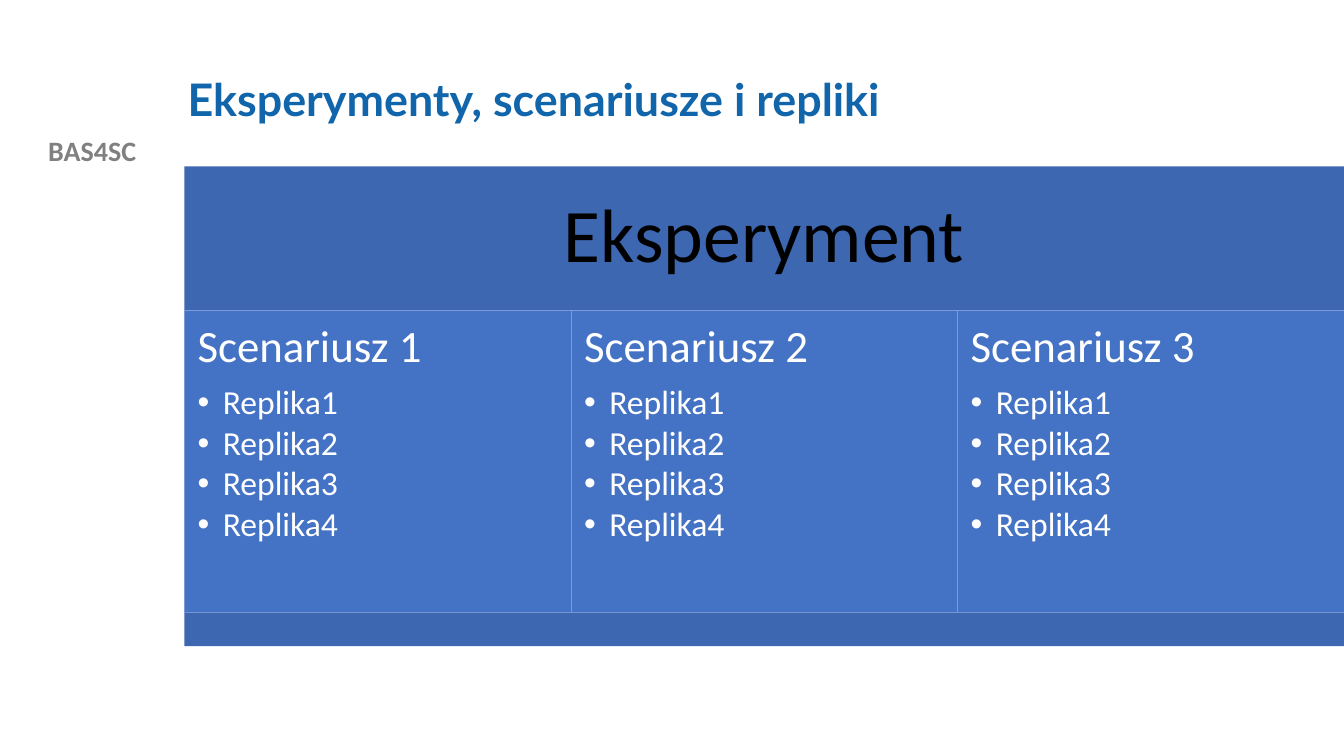
from lxml.etree import SubElement
from pptx import Presentation
from pptx.dml.color import RGBColor
from pptx.enum.shapes import MSO_SHAPE as Shape
from pptx.enum.text import MSO_ANCHOR as Anchor, PP_ALIGN as Align
from pptx.oxml.ns import qn
from pptx.util import Inches, Pt

# Content
TITLE = "Eksperymenty, scenariusze i repliki"
PROJECT = "BAS4SC"
EXPERIMENT = "Eksperyment"
SCENARIOS = ["Scenariusz 1", "Scenariusz 2", "Scenariusz 3"]
REPLICAS = ["Replika1", "Replika2", "Replika3", "Replika4"]

# Grid, in inches
SLIDE_W, SLIDE_H = 13.33, 7.5
LEFT, TOP = 1.83, 1.65
HEADER_H, SCENARIO_H, FOOTER_H = 1.43, 3, 0.33
GRID_W = SLIDE_W - LEFT
COLUMN_W = GRID_W / len(SCENARIOS)

BAR, CELL, CELL_EDGE = "3E67B2", "4472C4", "7A9BD8"
BLACK, WHITE, GREY, TITLE_BLUE = "000000", "FFFFFF", "808080", "1065AB"


def color(hex_code):
    return RGBColor.from_string(hex_code)


def write(paragraph, text, size, hex_code, font="Calibri", bold=False,
          align=Align.LEFT, spacing=0.9, after=0, bullet=False):
    paragraph.alignment = align
    paragraph.line_spacing = spacing
    paragraph.space_after = Pt(after)
    if bullet:
        props = paragraph._p.get_or_add_pPr()
        props.set("marL", str(Inches(0.25)))
        props.set("indent", str(Inches(-0.25)))
        SubElement(props, qn("a:buFont"), typeface="Arial")
        SubElement(props, qn("a:buChar"), char="•")
    run = paragraph.add_run()
    run.text = text
    run.font.name, run.font.size, run.font.bold = font, Pt(size), bold
    run.font.color.rgb = color(hex_code)


def set_frame(frame, anchor, inset):
    frame.word_wrap = True
    frame.vertical_anchor = anchor
    frame.margin_left = frame.margin_right = Inches(inset)
    frame.margin_top = frame.margin_bottom = Inches(inset)


def add_block(slide, left, top, width, height, fill, edge=None):
    block = slide.shapes.add_shape(Shape.RECTANGLE, Inches(left), Inches(top),
                                   Inches(width), Inches(height))
    block.shadow.inherit = False
    block.fill.solid()
    block.fill.fore_color.rgb = color(fill)
    if edge:
        block.line.color.rgb = color(edge)
        block.line.width = Pt(0.5)
    else:
        block.line.fill.background()
    return block


def main():
    deck = Presentation()
    deck.slide_width, deck.slide_height = Inches(SLIDE_W), Inches(SLIDE_H)
    slide = deck.slides.add_slide(deck.slide_layouts[5])

    # Title and project label
    title = slide.shapes.title
    title.left, title.top = Inches(1.76), Inches(0.4)
    title.width, title.height = Inches(10.66), Inches(1.22)
    title.text_frame.vertical_anchor = Anchor.MIDDLE
    write(title.text_frame.paragraphs[0], TITLE, 32, TITLE_BLUE, font="Lato", bold=True)

    project = slide.shapes.add_textbox(0, Inches(1.28), Inches(LEFT), Inches(0.43))
    project.text_frame.word_wrap = True
    write(project.text_frame.paragraphs[0], PROJECT, 20, GREY, bold=True,
          align=Align.CENTER, spacing=1)

    # Experiment header
    header = add_block(slide, LEFT, TOP, GRID_W, HEADER_H, BAR)
    set_frame(header.text_frame, Anchor.MIDDLE, 0.23)
    write(header.text_frame.paragraphs[0], EXPERIMENT, 54, BLACK, align=Align.CENTER)

    # Scenario columns with their replicas
    scenario_top = TOP + HEADER_H
    for column, scenario in enumerate(SCENARIOS):
        cell = add_block(slide, LEFT + column * COLUMN_W, scenario_top,
                         COLUMN_W, SCENARIO_H, CELL, CELL_EDGE)
        frame = cell.text_frame
        set_frame(frame, Anchor.TOP, 0.13)
        write(frame.paragraphs[0], scenario, 32, WHITE, after=10)
        for replica in REPLICAS:
            paragraph = frame.add_paragraph()
            paragraph.level = 1
            write(paragraph, replica, 24, WHITE, after=3, bullet=True)

    # Footer bar
    add_block(slide, LEFT, scenario_top + SCENARIO_H, GRID_W, FOOTER_H, BAR)

    deck.save("out.pptx")


if __name__ == "__main__":
    main()
